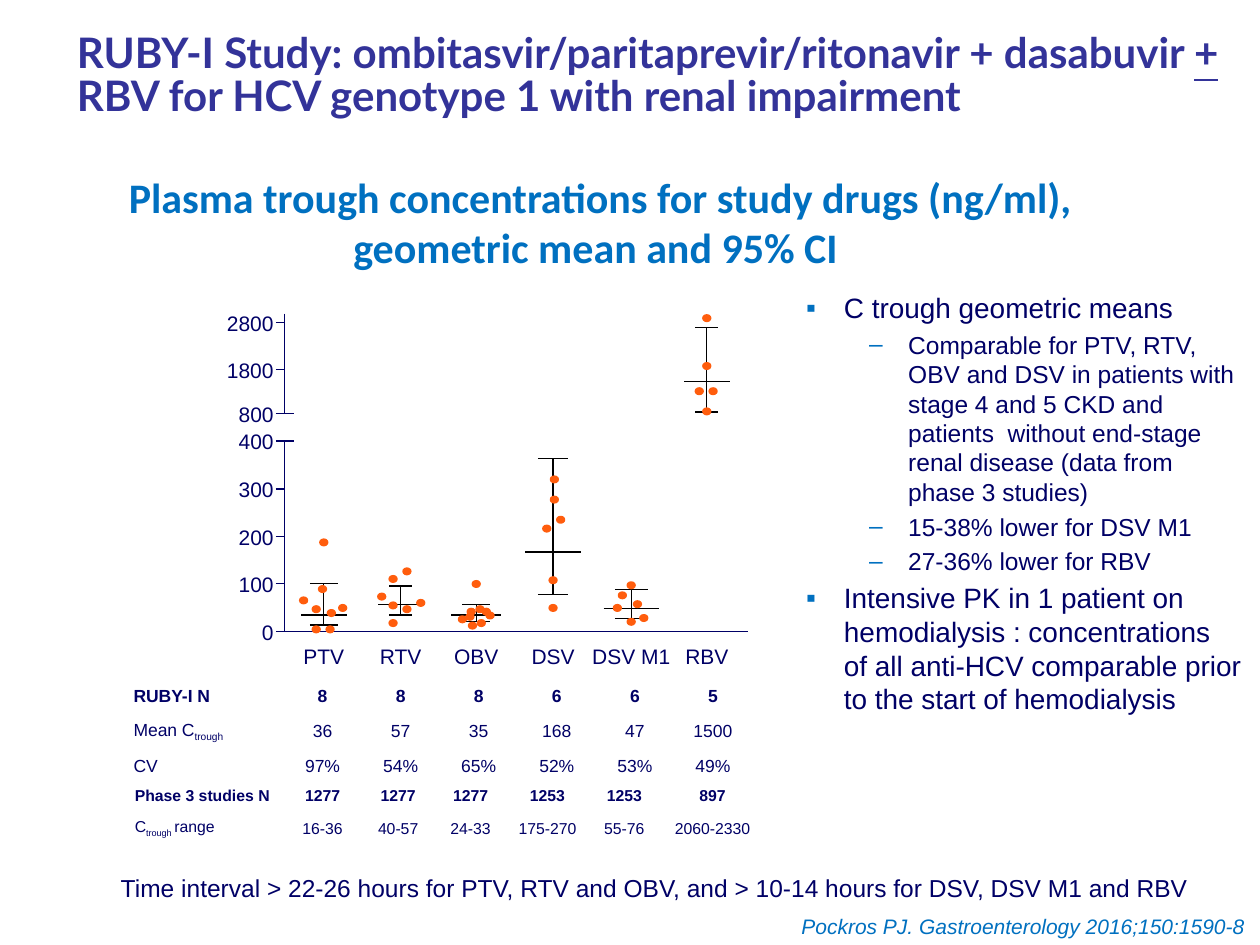
import pptx
import pptx.dml.color
import pptx.enum.shapes
import pptx.enum.text
import pptx.oxml
import pptx.oxml.ns
import pptx.util

PX = 9144
COLORS = {"navy": "000066", "title": "333399", "blue": "0070C0", "dot": "FF5D0D", "black": "000000"}
ALIGN = pptx.enum.text.PP_ALIGN
ANCHOR = pptx.enum.text.MSO_ANCHOR
SHAPE = pptx.enum.shapes.MSO_SHAPE
NS = pptx.oxml.ns.nsdecls("a")

BULLETS = [
    (0, "C trough geometric means"),
    (1, "Comparable for PTV, RTV, OBV and DSV in patients with stage 4 and 5 CKD and "
        "patients  without end-stage renal disease (data from phase 3 studies)"),
    (1, "15-38% lower for DSV M1"),
    (1, "27-36% lower for RBV"),
    (0, "Intensive PK in 1 patient on hemodialysis : concentrations \v"
        "of all anti-HCV comparable prior to the start of hemodialysis"),
]
BULLET_STYLES = [("▪", 30, 30, 16), ("–", 81, 31, 14)]

RUBY_ROWS = [
    ["RUBY-I N", "8", "8", "8", "6", "6", "5"],
    ["Mean C|trough", "36", "57", "35", "168", "47", "1500"],
    ["CV", "97%", "54%", "65%", "52%", "53%", "49%"],
]
PHASE3_ROWS = [
    ["Phase 3 studies N", "1277", "1277", "1277", "1253", "1253", "897"],
    ["C|trough |range", "16-36", "40-57", "24-33", "175-270", "55-76", "2060-2330"],
]

TICKS = [("2800", 7, 0), ("1800", 44, 0), ("800", 79, 7), ("400", 101, 7),
         ("300", 139, 0), ("200", 177, 0), ("100", 214, 0), ("0", 252, 0)]

# name, x, CI top, mean, CI bottom, cap half width, mean half width, dots
DRUGS = [
    ("PTV", 31, 214, 239, 247, 11, 18,
     [(0, 181), (-1, 218), (15, 233), (6, 237), (-16, 227), (-6, 234), (-6, 250), (5, 250)]),
    ("RTV", 92, 216, 231, 239, 9, 18,
     [(16, 229), (-6, 245), (5, 234), (-6, 231), (-15, 224), (-6, 210), (5, 204)]),
    ("OBV", 152, 231, 239, 244, 11, 20,
     [(0, 214), (4, 245), (11, 239), (8, 236), (3, 234), (-4, 236), (-5, 240), (-11, 242), (-3, 247)]),
    ("DSV", 213, 115, 189, 223, 12, 22,
     [(1, 131), (1, 147), (6, 163), (-5, 170), (0, 211), (0, 233)]),
    ("DSV M1", 275, 219, 234, 242, 13, 22,
     [(0, 215), (-7, 223), (5, 230), (-11, 233), (10, 241), (0, 244)]),
    ("RBV", 335, 11, 54, 78, 9, 18,
     [(0, 3), (0, 41), (-6, 61), (5, 61), (0, 77)]),
]


def px(*lengths):
    return [pptx.util.Emu(n * PX) for n in lengths]


def rgb(name):
    return pptx.dml.color.RGBColor.from_string(COLORS[name])


def style(p, size, color="navy", font="Arial", bold=False, italic=False):
    for r in p.runs:
        r.font.size, r.font.name = pptx.util.Pt(size), font
        r.font.bold, r.font.italic = bold, italic
        r.font.color.rgb = rgb(color)


def add_text(s, box, text, size, align=ALIGN.LEFT, wrap=False, anchor=ANCHOR.TOP, **look):
    tf = s.shapes.add_textbox(*px(*box)).text_frame
    tf.word_wrap, tf.vertical_anchor = wrap, anchor
    p = tf.paragraphs[0]
    p.text, p.alignment = text, align
    style(p, size, **look)


def add_line(s, x1, y1, x2, y2, color):
    c = s.shapes.add_connector(pptx.enum.shapes.MSO_CONNECTOR.STRAIGHT, *px(x1, y1, x2, y2))
    c.line.color.rgb, c.line.width = rgb(color), pptx.util.Pt(0.75)
    c._element.spPr.append(pptx.oxml.parse_xml(f"<a:effectLst {NS}/>"))


def add_title(s, box):
    sp = s.shapes.title
    sp.left, sp.top, sp.width, sp.height = px(*box)
    tf = sp.text_frame
    tf.auto_size, tf.vertical_anchor = pptx.enum.text.MSO_AUTO_SIZE.NONE, ANCHOR.MIDDLE
    p = tf.paragraphs[0]
    p.alignment, p.line_spacing = ALIGN.LEFT, 0.85
    for text in ("RUBY-I Study: ombitasvir/paritaprevir/ritonavir + dasabuvir ", "+",
                 " RBV for HCV genotype 1 with renal impairment"):
        r = p.add_run()
        r.text = text
        r.font.underline = text == "+"
    style(p, 24, "title", "Lato", bold=True)


def add_bullets(s, box):
    tf = s.shapes.add_textbox(*px(*box)).text_frame
    tf.word_wrap = True
    for i, (level, text) in enumerate(BULLETS):
        p = tf.add_paragraph() if i else tf.paragraphs[0]
        char, margin, hang, size = BULLET_STYLES[level]
        p.text, p.level = text, level
        if i:
            p.space_before = pptx.util.Pt(3)
        pPr = p._p.get_or_add_pPr()
        pPr.set("marL", str(margin * PX))
        pPr.set("indent", str(-hang * PX))
        for xml in (f'<a:buClr {NS}><a:srgbClr val="{COLORS["blue"]}"/></a:buClr>',
                    f'<a:buFont {NS} typeface="Arial"/>',
                    f'<a:buChar {NS} char="{char}"/>'):
            pPr.append(pptx.oxml.parse_xml(xml))
        style(p, size)


def add_data_table(s, left, top, widths, row_height, rows, size):
    box = px(left, top, sum(widths), row_height * len(rows))
    table = s.shapes.add_table(len(rows), len(widths), *box).table
    table.first_row = table.horz_banding = False
    for column, width in zip(table.columns, px(*widths)):
        column.width = width
    for i, row in enumerate(rows):
        for j, text in enumerate(row):
            cell = table.cell(i, j)
            cell.fill.background()
            cell.vertical_anchor = ANCHOR.MIDDLE
            p = cell.text_frame.paragraphs[0]
            p.alignment = ALIGN.CENTER if j else ALIGN.LEFT
            for k, part in enumerate(text.split("|")):
                r = p.add_run()
                r.text = part
                if k % 2:
                    r._r.get_or_add_rPr().set("baseline", "-25000")
            style(p, size, bold=i == 0)


def add_axes(s, left, top):
    for start, end in ((0, 79), (101, 252)):
        add_line(s, left, top + start, left, top + end, "navy")
    add_line(s, left, top + 252, left + 368, top + 252, "navy")
    for label, y, inner in TICKS:
        add_line(s, left - 7, top + y, left + inner, top + y, "navy")
        add_text(s, (left - 64, top + y - 16, 65, 33), label, 12, ALIGN.RIGHT, anchor=ANCHOR.MIDDLE)


def add_drug(s, left, top, drug):
    name, x, high, mean, low, cap, bar, dots = drug
    x += left
    for y, half in ((high, cap), (mean, bar), (low, cap)):
        add_line(s, x - half, top + y, x + half, top + y, "black")
    add_line(s, x, top + high, x, top + low, "black")
    for dx, y in dots:
        sp = s.shapes.add_shape(SHAPE.OVAL, *px(x + dx - 3, top + y - 2, 6, 5))
        sp.shadow.inherit = False
        sp.fill.solid()
        sp.fill.fore_color.rgb = sp.line.color.rgb = rgb("dot")
        sp.line.width = pptx.util.Pt(1)
    add_text(s, (x - 47, top + 257, 94, 33), name, 12, ALIGN.CENTER)


def add_plot(s, left, top):
    add_axes(s, left, top)
    for drug in DRUGS:
        add_drug(s, left, top, drug)


def main():
    prs = pptx.Presentation()
    prs.slide_width, prs.slide_height = px(1000, 750)
    s = prs.slides.add_slide(prs.slide_layouts[5])
    add_title(s, (51, 8, 949, 107))
    add_text(s, (20, 131, 913, 63),
             "Plasma trough concentrations for study drugs (ng/ml), geometric mean and 95% CI ",
             24, ALIGN.CENTER, wrap=True, color="blue", font="Calibri", bold=True)
    add_plot(s, 226, 249)
    add_bullets(s, (630, 226, 367, 315))
    add_data_table(s, 96, 539, [129] + [62] * 6, 27, RUBY_ROWS, 10)
    add_data_table(s, 97, 619, [129, 60, 60, 55, 67, 55, 85], 25, PHASE3_ROWS, 9)
    add_text(s, (86, 688, 878, 34),
             "Time interval > 22-26 hours for PTV, RTV and OBV, and > 10-14 hours for DSV, DSV M1 and RBV", 14)
    add_text(s, (623, 720, 375, 30), "Pockros PJ. Gastroenterology 2016;150:1590-8",
             12, ALIGN.RIGHT, color="blue", italic=True)
    prs.save("out.pptx")


if __name__ == "__main__":
    main()
